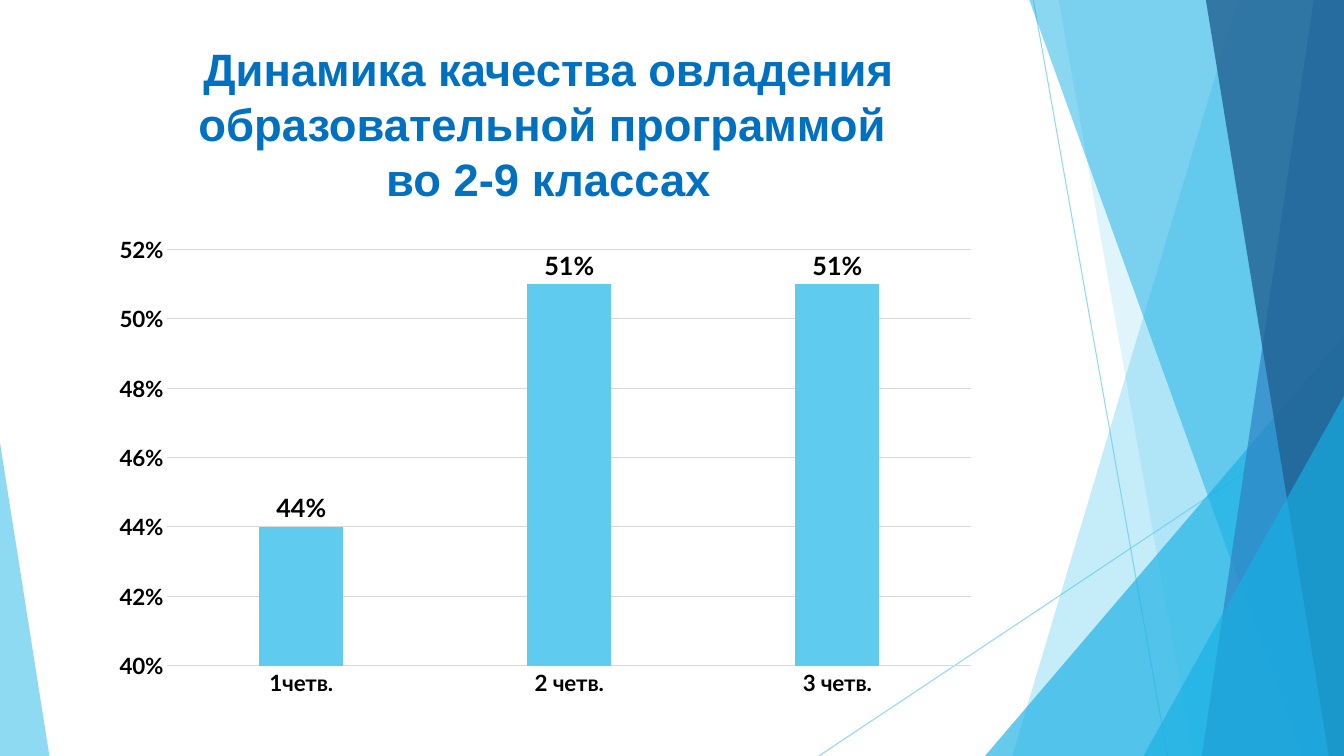
from lxml.etree import SubElement
from pptx import Presentation
from pptx.chart.data import CategoryChartData
from pptx.dml.color import RGBColor
from pptx.enum.chart import XL_CHART_TYPE, XL_LABEL_POSITION, XL_TICK_MARK
from pptx.enum.shapes import MSO_CONNECTOR, MSO_SHAPE
from pptx.enum.text import MSO_ANCHOR, MSO_AUTO_SIZE, PP_ALIGN
from pptx.oxml.ns import qn
from pptx.util import Inches, Pt

SKY, CYAN, BLUE, NAVY = "5FCBEF", "17B0E4", "2E83C3", "226292"
GRID, INK, HEAD = "D9D9D9", "000000", "0070C0"


def color(code):
    return RGBColor.from_string(code)


def fade(shape, share):
    """Set the opacity, in percent, of every plain colour in the shape."""
    for node in shape.element.iter(qn("a:srgbClr")):
        SubElement(node, qn("a:alpha")).set("val", str(share * 1000))


class Deck:
    """Slide and its style; all lengths are percent of the slide's size."""

    def __init__(self):
        self.prs = Presentation()
        self.prs.slide_width, self.prs.slide_height = Inches(13.33), Inches(7.5)
        self.slide = self.prs.slides.add_slide(self.prs.slide_layouts[5])
        self.shapes = self.slide.shapes

    def scale(self, *sizes):
        """Turn alternating x and y percentages into lengths."""
        sides = (self.prs.slide_width, self.prs.slide_height)
        return [round(size * sides[i % 2] / 100) for i, size in enumerate(sizes)]

    def paint(self, shape, fill, share):
        shape.shadow.inherit = False
        shape.fill.solid()
        shape.fill.fore_color.rgb = color(fill)
        shape.line.fill.background()
        fade(shape, share)

    def line(self, *ends):
        line = self.shapes.add_connector(MSO_CONNECTOR.STRAIGHT, *self.scale(*ends))
        line.line.color.rgb = color(SKY)
        line.line.width = Pt(0.75)
        fade(line, 70)
        SubElement(line.element.spPr, qn("a:effectLst"))

    def pane(self, top, base, fill, share):
        """Draw a full-height pane from a slanted left edge to the right side."""
        start, *rest = [self.scale(x, y) for x, y in
                        ((top, 0), (100, 0), (100, 100), (base, 100))]
        form = self.shapes.build_freeform(*start)
        form.add_line_segments(rest, close=True)
        self.paint(form.convert_to_shape(), fill, share)

    def wedge(self, left, top, width, peak, fill, share):
        """Draw a triangle standing on the bottom edge of the slide."""
        box = self.scale(left, top, width, 100 - top)
        shape = self.shapes.add_shape(MSO_SHAPE.ISOSCELES_TRIANGLE, *box)
        shape.adjustments[0] = peak
        self.paint(shape, fill, share)

    def title(self, text, *box):
        title = self.shapes.title
        title.left, title.top, title.width, title.height = self.scale(*box)
        frame = title.text_frame
        frame.text = text
        frame.word_wrap = True
        frame.auto_size = MSO_AUTO_SIZE.NONE
        frame.vertical_anchor = MSO_ANCHOR.TOP
        para = frame.paragraphs[0]
        para.alignment = PP_ALIGN.CENTER
        para.line_spacing = Pt(39)
        for run in para.runs:
            self.style(run.font, 32.4, HEAD, "Arial")

    def style(self, font, size, code=INK, name="Lato"):
        font.size, font.bold, font.name = Pt(size), True, name
        font.color.rgb = color(code)

    def chart(self, cats, vals, *box):
        data = CategoryChartData(number_format="0%")
        data.categories = cats
        data.add_series("Series 1", vals)
        chart = self.shapes.add_chart(
            XL_CHART_TYPE.COLUMN_CLUSTERED, *self.scale(*box), data).chart
        chart.has_legend = chart.has_title = False
        self.style(chart.font, 16)
        self.axes(chart.category_axis, chart.value_axis)
        self.bars(chart.plots[0])

    def axes(self, cat, val):
        for axis in (cat, val):
            axis.major_tick_mark = axis.minor_tick_mark = XL_TICK_MARK.NONE
            self.style(axis.tick_labels.font, 16)
        val.has_major_gridlines = True
        for part in (cat, val.major_gridlines):
            part.format.line.color.rgb = color(GRID)
            part.format.line.width = Pt(0.75)
        val.format.line.fill.background()
        val.minimum_scale, val.maximum_scale, val.major_unit = 0.4, 0.52, 0.02
        val.tick_labels.number_format = "0%"
        val.tick_labels.number_format_is_linked = False

    def bars(self, plot):
        plot.gap_width, plot.overlap = 219, -27
        plot.vary_by_categories = False
        fill = plot.series[0].format.fill
        fill.solid()
        fill.fore_color.rgb = color(SKY)
        labels = plot.series[0].data_labels
        labels.show_value = True
        labels.number_format, labels.number_format_is_linked = "0%", False
        labels.position = XL_LABEL_POSITION.OUTSIDE_END
        self.style(labels.font, 18)


def main():
    deck = Deck()
    deck.line(76.89, 0, 86.87, 100)
    deck.line(100, 53.73, 60.92, 100)
    deck.pane(92.12, 75.32, SKY, 36)
    deck.pane(78.77, 88.75, SKY, 20)
    deck.wedge(73.29, 44.4, 26.71, 1, CYAN, 66)
    deck.pane(76.59, 96.85, CYAN, 50)
    deck.pane(97.75, 89.42, BLUE, 70)
    deck.pane(89.72, 98.87, NAVY, 80)
    deck.wedge(85.07, 52.4, 14.93, 1, CYAN, 66)
    deck.wedge(0, 58.53, 3.68, 0, SKY, 70)
    deck.title("Динамика качества овладения образовательной программой \v"
               "во 2-9 классах", 5.55, 4.8, 70.52, 30)
    deck.chart(("1четв.", "2 четв.", "3 четв."), (0.44, 0.51, 0.51),
               7.58, 30, 66.02, 63.33)
    deck.prs.save("out.pptx")


if __name__ == "__main__":
    main()
